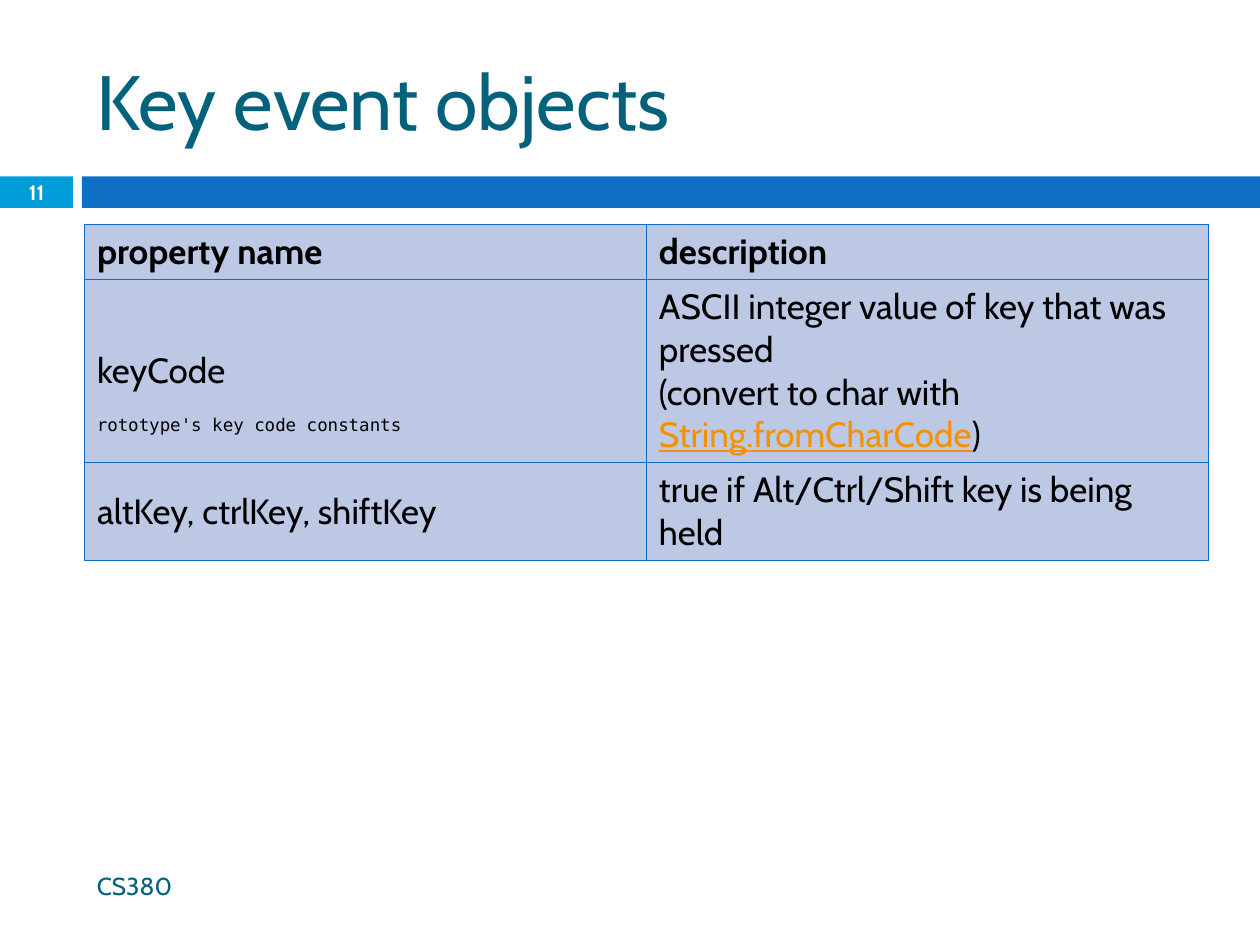
from lxml.etree import SubElement
from pptx import Presentation
from pptx.dml.color import RGBColor
from pptx.enum.shapes import MSO_SHAPE as Shape
from pptx.enum.text import MSO_ANCHOR as Anchor, PP_ALIGN as Align
from pptx.oxml.ns import qn
from pptx.util import Inches, Pt


def rgb(value):
    return RGBColor.from_string(value)


class SlideBuilder:
    """Draws styled bars, labels and tables on one slide."""

    TEAL, BLUE, CYAN = "04617B", "0F6FC6", "009DD9"
    CELL, LINK, BLACK, WHITE = "BDC8E4", "F49100", "000000", "FFFFFF"
    FONT, MONO = "Cabin", "DejaVu Sans Mono"

    def __init__(self, slide):
        self.slide = slide

    def bar(self, box, color):
        bar = self.slide.shapes.add_shape(Shape.RECTANGLE, *map(Inches, box))
        bar.shadow.inherit = False
        bar.fill.solid()
        bar.fill.fore_color.rgb = rgb(color)
        bar.line.fill.background()

    def run(self, paragraph, text, size, color, **formats):
        run = paragraph.add_run()
        run.text = text
        run.font.color.rgb = rgb(color)
        style = {"name": self.FONT, "size": Pt(size), "bold": False} | formats
        for name, value in style.items():
            setattr(run.font, name, value)

    def label(self, box, text, size, color, align=Align.LEFT, **formats):
        frame = self.slide.shapes.add_textbox(*map(Inches, box)).text_frame
        frame.word_wrap = True
        frame.vertical_anchor = Anchor.MIDDLE
        frame.paragraphs[0].alignment = align
        self.run(frame.paragraphs[0], text, size, color, **formats)

    def border(self, cell):
        properties = cell._tc.get_or_add_tcPr()
        for position, side in enumerate(("a:lnL", "a:lnR", "a:lnT", "a:lnB")):
            line = SubElement(properties, qn(side), w=str(Pt(0.79)))
            fill = SubElement(line, qn("a:solidFill"))
            SubElement(fill, qn("a:srgbClr"), val=self.BLUE)
            properties.insert(position, line)

    def cell(self, cell, lines, bold):
        cell.fill.solid()
        cell.fill.fore_color.rgb = rgb(self.CELL)
        cell.vertical_anchor = Anchor.MIDDLE
        self.border(cell)
        paragraph = cell.text_frame.paragraphs[0]
        for number, line in enumerate(lines):
            if number:
                paragraph.add_line_break()
            for text, linked in line:
                color = self.LINK if linked else self.BLACK
                self.run(paragraph, text, 20, color, bold=bold, underline=linked)

    def table(self, left, top, widths, heights, rows):
        box = map(Inches, (left, top, sum(widths), sum(heights)))
        table = self.slide.shapes.add_table(len(rows), len(widths), *box).table
        table.first_row = table.horz_banding = False
        for column, width in zip(table.columns, widths):
            column.width = Inches(width)
        for index, (row, height) in enumerate(zip(rows, heights)):
            table.rows[index].height = Inches(height)
            for column, content in enumerate(row):
                lines = [[(content, False)]] if isinstance(content, str) else content
                self.cell(table.cell(index, column), lines, bold=index == 0)


def main():
    deck = Presentation()
    deck.slide_width, deck.slide_height = Inches(10), Inches(7.5)
    page = SlideBuilder(deck.slides.add_slide(deck.slide_layouts[6]))

    page.bar((0, 1.4, 0.58, 0.25), page.CYAN)
    page.bar((0.65, 1.4, 9.35, 0.25), page.BLUE)
    page.label((0.67, 0.25, 8.92, 1.08), "Key event objects", 44, page.TEAL)

    key_code_description = [
        [("ASCII integer value of key that was pressed ", False)],
        [("(convert to char with ", False), ("String.fromCharCode", True), (")", False)],
    ]
    properties = [
        ("property name", "description"),
        ("keyCode", key_code_description),
        ("altKey, ctrlKey, shiftKey", "true if Alt/Ctrl/Shift key is being held"),
    ]
    page.table(0.67, 1.78, (4.46, 4.46), (0.44, 1.45, 0.78), properties)

    page.label((0.67, 6.83, 5.93, 0.4), "CS380", 14, page.TEAL)
    page.label((0, 1.39, 0.58, 0.27), "11", 11.9, page.WHITE, Align.CENTER, bold=True)
    page.label((0.67, 3.12, 9.33, 0.5), "rototype's key code constants", 10,
               page.BLACK, name=page.MONO)
    deck.save("out.pptx")


if __name__ == "__main__":
    main()
